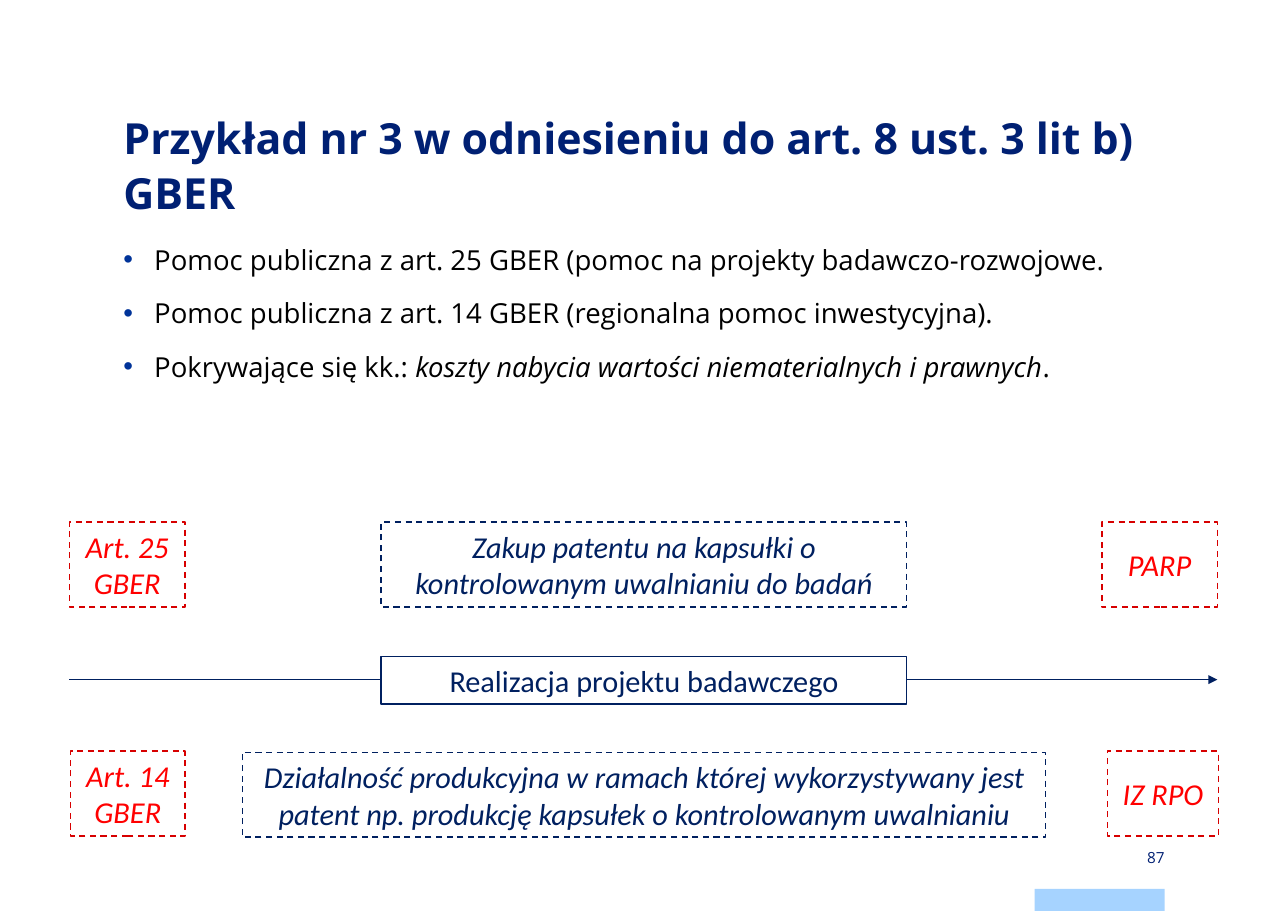
from pptx import Presentation
from pptx.dml.color import RGBColor
from pptx.enum.dml import MSO_LINE
from pptx.enum.shapes import MSO_CONNECTOR, MSO_SHAPE
from pptx.enum.text import MSO_ANCHOR, PP_ALIGN
from pptx.oxml.ns import qn
from pptx.util import Inches, Pt
from lxml.etree import SubElement

WHITE = RGBColor(0xFF, 0xFF, 0xFF)
BLACK = RGBColor(0, 0, 0)
TITLE_BLUE = RGBColor(0x00, 0x20, 0x73)
NAVY = RGBColor(0x00, 0x20, 0x60)
RED = RGBColor(0xFF, 0, 0)
DARK_RED = RGBColor(0xD7, 0, 0)
PALE_BLUE = RGBColor(0xA6, 0xD3, 0xFF)
BULLET_BLUE = "003399"

TITLE = "Przykład nr 3 w odniesieniu do art. 8 ust. 3 lit b) GBER"
# each bullet is a list of (text, italic) runs
BULLETS = [
    [("Pomoc publiczna z art. 25 GBER (pomoc na projekty badawczo-rozwojowe.", False)],
    [("Pomoc publiczna z art. 14 GBER (regionalna pomoc inwestycyjna).", False)],
    [("Pokrywające się kk.: ", False),
     ("koszty nabycia wartości niematerialnych i prawnych", True), (".", False)],
]
PAGE_NUMBER = "87"

LEFT, WIDTH = 1.12, 9.45
TOP_ROW, BOTTOM_ROW, ROW_H = 4.74, 6.82, 0.77
AXIS_LEFT, AXIS_RIGHT, AXIS_Y = 0.63, 11.05, 6.17
TAG = dict(color=RED, line=DARK_RED, italic=True)
NOTE = dict(color=NAVY, line=NAVY, italic=True)
STAGE = dict(color=NAVY, line=NAVY, italic=False)
BOXES = [  # text, (left, top, width, height), look
    ("Zakup patentu na kapsułki o kontrolowanym uwalnianiu do badań",
     (3.46, TOP_ROW, 4.77, ROW_H), NOTE),
    ("Art. 25 GBER", (AXIS_LEFT, TOP_ROW, 1.05, ROW_H), TAG),
    ("Art. 14 GBER", (0.64, BOTTOM_ROW, 1.04, ROW_H), TAG),
    ("PARP", (10, TOP_ROW, 1.05, ROW_H), TAG),
    ("IZ RPO", (10.05, BOTTOM_ROW, 1.01, ROW_H), TAG),
    ("Realizacja projektu badawczego", (3.46, 5.96, 4.77, 0.43), STAGE),
    ("Działalność produkcyjna w ramach której wykorzystywany jest "
     "patent np. produkcję kapsułek o kontrolowanym uwalnianiu",
     (2.2, 6.83, 7.29, ROW_H), NOTE),
]


def inches(*values):
    return [Inches(v) for v in values]


def set_frame(tf, anchor, margin=0):
    values = dict(margin_left=margin, margin_right=margin, margin_top=margin / 2,
                  margin_bottom=margin / 2)
    for name, value in values.items():
        setattr(tf, name, Inches(value))
    tf.word_wrap = True
    tf.vertical_anchor = anchor


def add_run(p, text, color, **font):
    r = p.add_run()
    r.text = text
    for name, value in font.items():
        setattr(r.font, name, value)
    r.font.color.rgb = color


def add_bullet(p):
    pPr = p._p.get_or_add_pPr()
    pPr.set("marL", str(Inches(0.28)))
    pPr.set("indent", str(-Inches(0.28)))
    SubElement(SubElement(pPr, qn("a:buClr")), qn("a:srgbClr"), val=BULLET_BLUE)
    SubElement(pPr, qn("a:buFont"), typeface="Arial")
    SubElement(pPr, qn("a:buChar"), char="•")


def add_rect(s, place):
    sp = s.shapes.add_shape(MSO_SHAPE.RECTANGLE, *inches(*place))
    sp.shadow.inherit = False
    return sp


def add_box(s, text, place, look):
    """Add a dashed, unfilled box, or a solid white one for the project stage."""
    sp = add_rect(s, place)
    sp.line.color.rgb = look["line"]
    sp.line.width = Pt(1)
    if look is STAGE:
        sp.fill.solid()
        sp.fill.fore_color.rgb = WHITE
    else:
        sp.fill.background()
        sp.line.dash_style = MSO_LINE.DASH
    set_frame(sp.text_frame, MSO_ANCHOR.MIDDLE, 0.1)
    p = sp.text_frame.paragraphs[0]
    p.alignment = PP_ALIGN.CENTER
    add_run(p, text, look["color"], size=Pt(19.8), name="Calibri", italic=look["italic"])


def add_timeline(s):
    line = s.shapes.add_connector(
        MSO_CONNECTOR.STRAIGHT, *inches(AXIS_LEFT, AXIS_Y, AXIS_RIGHT, AXIS_Y))
    line.line.color.rgb = NAVY
    line.line.width = Pt(1)
    SubElement(line.line._get_or_add_ln(), qn("a:tailEnd"), type="triangle")
    SubElement(line._element.spPr, qn("a:effectLst"))


def main():
    prs = Presentation()
    prs.slide_width, prs.slide_height = inches(11.69, 8.27)
    s = prs.slides.add_slide(prs.slide_layouts[5])

    bar = add_rect(s, (9.39, 8.07, 1.18, 0.2))
    bar.fill.solid()
    bar.fill.fore_color.rgb = PALE_BLUE
    bar.line.fill.background()

    title = s.shapes.title
    title.left, title.top, title.width, title.height = inches(LEFT, 0.98, WIDTH, 1.18)
    set_frame(title.text_frame, MSO_ANCHOR.TOP)
    p = title.text_frame.paragraphs[0]
    p.alignment = PP_ALIGN.LEFT
    p.line_spacing = Pt(36)
    add_run(p, TITLE, TITLE_BLUE, size=Pt(28), name="Open Sans", bold=True)

    tf = s.shapes.add_textbox(*inches(LEFT, 2.17, WIDTH, 5.12)).text_frame
    set_frame(tf, MSO_ANCHOR.TOP)
    for i, runs in enumerate(BULLETS):
        p = tf.add_paragraph() if i else tf.paragraphs[0]
        add_bullet(p)
        p.line_spacing = Pt(24)
        p.space_before = Pt(11 if i else 0)
        for text, italic in runs:
            add_run(p, text, BLACK, size=Pt(18), name="Open Sans", italic=italic)

    tf = s.shapes.add_textbox(*inches(9.39, 7.68, 1.18, 0.2)).text_frame
    set_frame(tf, MSO_ANCHOR.MIDDLE)
    p = tf.paragraphs[0]
    p.alignment = PP_ALIGN.RIGHT
    add_run(p, PAGE_NUMBER, TITLE_BLUE, size=Pt(10), name="Open Sans")

    add_timeline(s)
    for text, place, look in BOXES:
        add_box(s, text, place, look)

    prs.save("out.pptx")


if __name__ == "__main__":
    main()
